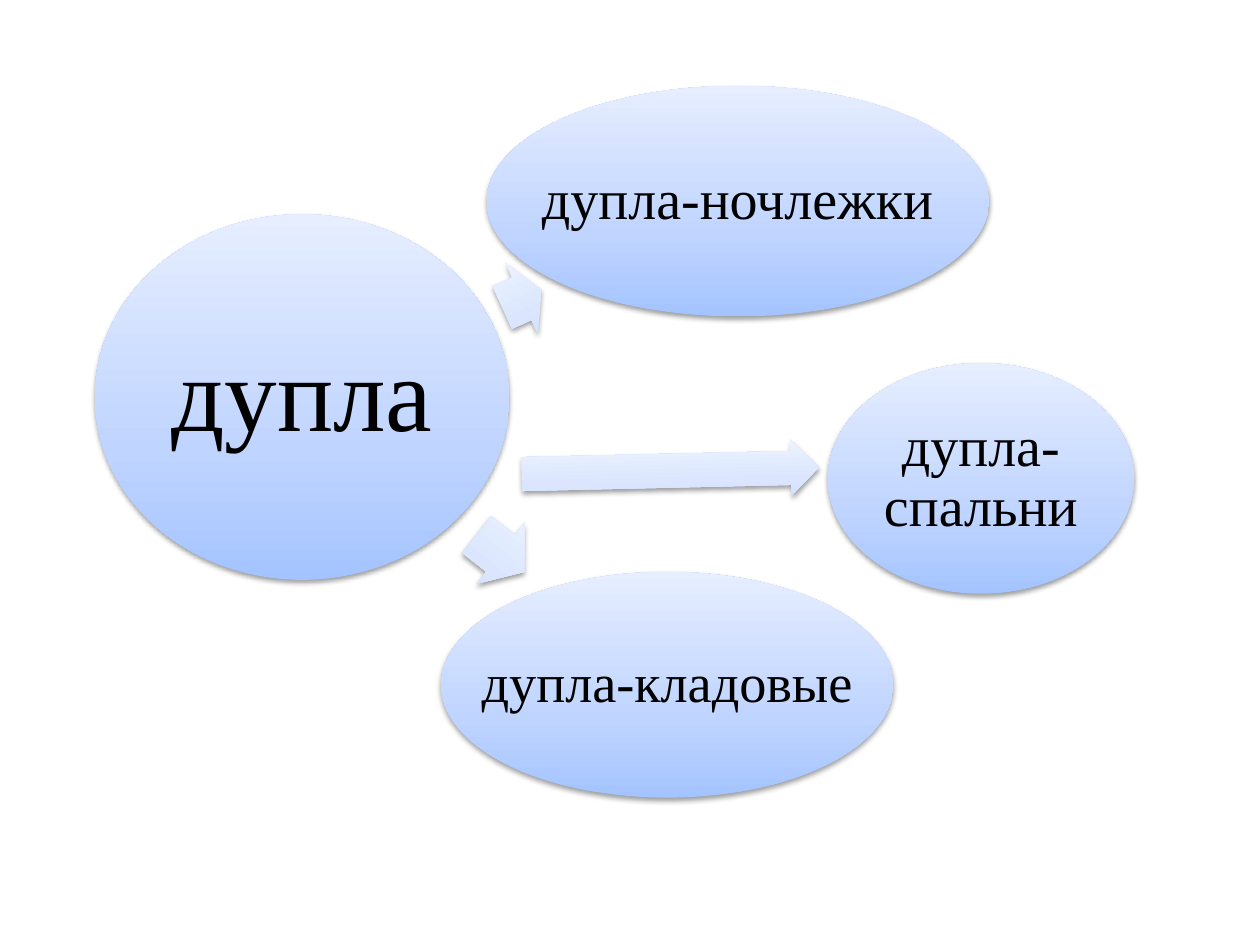
from dataclasses import dataclass

from lxml import etree
from pptx import Presentation
from pptx.dml.color import RGBColor
from pptx.enum.shapes import MSO_SHAPE
from pptx.enum.text import MSO_ANCHOR, PP_ALIGN
from pptx.oxml import parse_xml
from pptx.oxml.ns import qn
from pptx.util import Cm, Pt

ELLIPSE, ARROW = MSO_SHAPE.OVAL, MSO_SHAPE.RIGHT_ARROW
CENTER, MIDDLE = PP_ALIGN.CENTER, MSO_ANCHOR.MIDDLE
DRAWING_NS = "http://schemas.openxmlformats.org/drawingml/2006/main"
BLANK_LAYOUT = 6


@dataclass(frozen=True)
class Theme:
    font: str = "Times New Roman"
    ink: str = "000000"
    bubble: tuple = ("A4C4FF", "BFD4FF", "E6EEFF")
    arrow: tuple = ("CDDDFE", "DBE6FE", "F0F5FF")
    hub_size: int = 60
    branch_size: int = 32
    small_size: int = 31


THEME = Theme()

# Boxes are left, top, width, height in cm, relative to the diagram
HUB = ("дупла", (0, 2.59, 8.36, 7.37), THEME.hub_size, False)

# Label, bubble box, text size, wraps, arrow box, arrow rotation
BRANCHES = [
    ("дупла-ночлежки", (7.9, 0, 10.13, 4.65), THEME.branch_size, False,
     (8.18, 3.51, 0.86, 1.57), 335.7),
    ("дупла-спальни", (14.78, 5.59, 6.17, 4.65), THEME.branch_size, True,
     (8.61, 7.19, 5.99, 1.14), 358.7),
    ("дупла-кладовые", (6.98, 9.8, 9.12, 4.55), THEME.small_size, False,
     (7.57, 8.64, 1.22, 1.57), 38.1),
]


def add_soft_shape(page, kind, origin, box, colours):
    """Add a borderless shape with a vertical gradient and a soft shadow."""
    left, top, width, height = box
    shape = page.shapes.add_shape(
        kind, Cm(origin[0] + left), Cm(origin[1] + top), Cm(width), Cm(height))
    shape.line.fill.background()
    shape.shadow.inherit = False

    # Gradient from bottom to top
    stops = "".join(
        f'<a:gs pos="{place * 1000}"><a:srgbClr val="{colour}"/></a:gs>'
        for place, colour in zip((0, 35, 100), colours))
    gradient = parse_xml(
        f'<a:gradFill xmlns:a="{DRAWING_NS}" rotWithShape="1">'
        f'<a:gsLst>{stops}</a:gsLst><a:lin ang="16200000" scaled="0"/></a:gradFill>')
    properties = shape.element.spPr
    properties.find(qn("a:prstGeom")).addnext(gradient)

    # Shadow straight below
    shadow = etree.SubElement(
        properties.find(qn("a:effectLst")), qn("a:outerShdw"),
        blurRad=str(Pt(3.1)), dist=str(Pt(1.6)), dir="5400000", rotWithShape="0")
    colour = etree.SubElement(shadow, qn("a:srgbClr"), val="000000")
    etree.SubElement(colour, qn("a:alpha"), val="38000")
    return shape


def add_bubble(page, origin, label, box, size, wraps):
    bubble = add_soft_shape(page, ELLIPSE, origin, box, THEME.bubble)
    frame = bubble.text_frame
    frame.word_wrap = wraps
    frame.vertical_anchor = MIDDLE
    frame.margin_left = frame.margin_right = Cm(0.1)
    frame.margin_top = frame.margin_bottom = Cm(0.1)
    para = frame.paragraphs[0]
    para.alignment = CENTER
    para.line_spacing = 0.9
    span = para.add_run()
    span.text = label
    span.font.name = THEME.font
    span.font.size = Pt(size)
    span.font.color.rgb = RGBColor.from_string(THEME.ink)


def add_arrow(page, origin, box, rotation):
    arrow = add_soft_shape(page, ARROW, origin, box, THEME.arrow)
    arrow.adjustments[0] = 0.6
    arrow.adjustments[1] = 0.5
    arrow.rotation = rotation


def add_diagram(page, origin):
    """Place the hub, then each arrow with the bubble it points to."""
    add_bubble(page, origin, *HUB)
    for label, box, size, wraps, arrow_box, rotation in BRANCHES:
        add_arrow(page, origin, arrow_box, rotation)
        add_bubble(page, origin, label, box, size, wraps)


def main():
    deck = Presentation()
    deck.slide_width, deck.slide_height = Cm(25.4), Cm(19.05)
    page = deck.slides.add_slide(deck.slide_layouts[BLANK_LAYOUT])
    add_diagram(page, (1.91, 1.73))
    deck.save("out.pptx")


if __name__ == "__main__":
    main()
